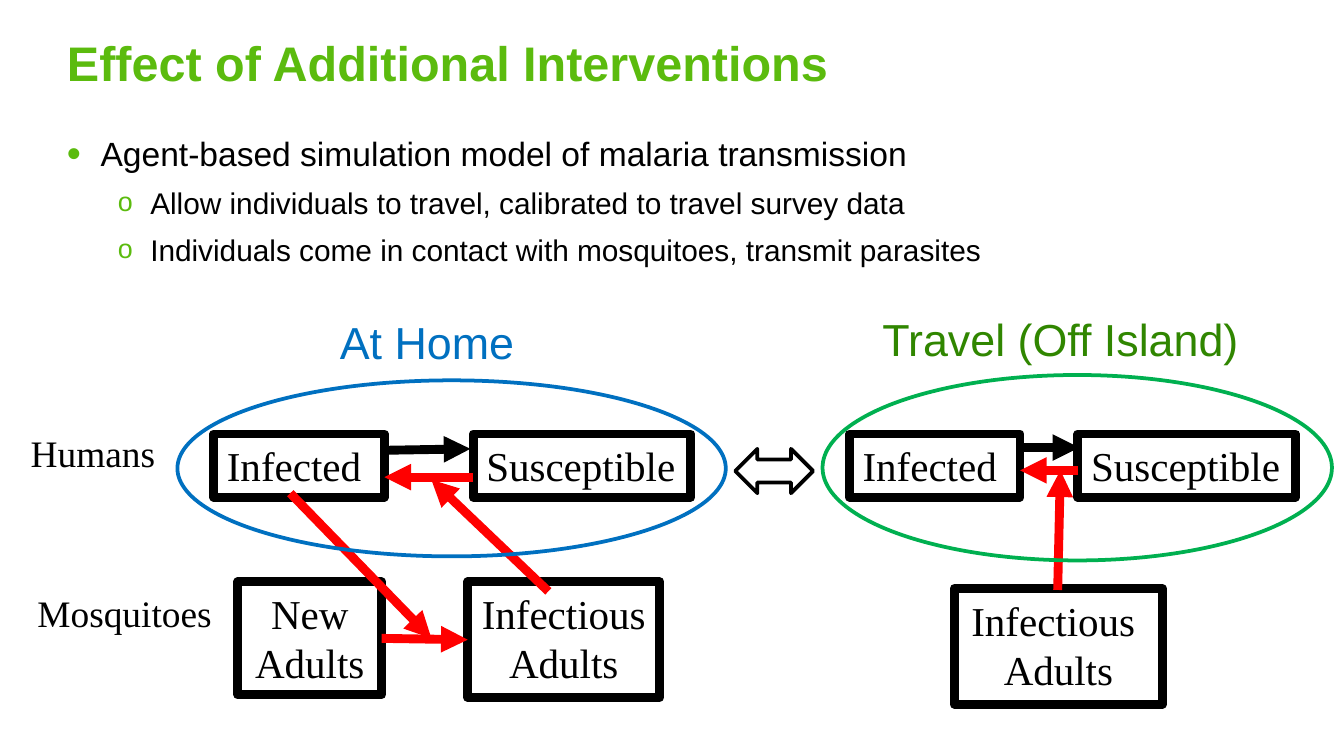
from lxml import etree
from pptx import Presentation
from pptx.dml.color import RGBColor
from pptx.enum.shapes import MSO_CONNECTOR, MSO_SHAPE
from pptx.enum.text import MSO_ANCHOR, PP_ALIGN
from pptx.oxml.ns import qn
from pptx.util import Pt

LEFT, CENTER = PP_ALIGN.LEFT, PP_ALIGN.CENTER
TOP, MIDDLE = MSO_ANCHOR.TOP, MSO_ANCHOR.MIDDLE
RECTANGLE, OVAL = MSO_SHAPE.RECTANGLE, MSO_SHAPE.OVAL
DOUBLE_ARROW = MSO_SHAPE.LEFT_RIGHT_ARROW
STRAIGHT = MSO_CONNECTOR.STRAIGHT

PX = 9144  # 100 px to the inch
SLIDE_WIDTH = 1000
SANS, SERIF = "Arial", "Times New Roman"
COLORS = {
    "lime": "5BBB0E", "black": "000000", "white": "FFFFFF", "red": "FF0000",
    "blue": "0070C0", "green": "00B050", "dark green": "308600",
}
HEAVY, THIN = 4.75, 2

TITLE = "Effect of Additional Interventions"
# text, size, left margin px, hanging px, bullet, bullet size %
POINTS = [
    ("Agent-based simulation model of malaria transmission", 18, 25, 25, "•", 120),
    ("Allow individuals to travel, calibrated to travel survey data", 16, 62, 24, "o", 90),
    ("Individuals come in contact with mosquitoes, transmit parasites", 16, 62, 24, "o", 90),
]
# text, place, font, size, colour, alignment, wrap
LABELS = [
    ("Humans", (13, 315, 140, 44), SERIF, 20, "black", LEFT, True),
    ("Mosquitoes", (18, 434, 183, 44), SERIF, 20, "black", LEFT, True),
    ("At Home", (243, 229, 151, 50), SANS, 24, "blue", LEFT, False),
    ("Travel (Off Island)", (645, 227, 288, 50), SANS, 24, "dark green", CENTER, False),
]
# name: text, place, alignment
STATES = {
    "home new": ("New Adults", (177, 433, 107, 84), CENTER),
    "home infectious": ("Infectious\nAdults", (348, 433, 143, 86), CENTER),
    "home infected": ("Infected", (159, 323, 127, 47), LEFT),
    "home susceptible": ("Susceptible", (352, 323, 162, 47), LEFT),
    "travel infectious": ("Infectious \nAdults", (710, 438, 155, 86), CENTER),
    "travel infected": ("Infected", (632, 323, 127, 47), LEFT),
    "travel susceptible": ("Susceptible", (802, 323, 162, 47), LEFT),
}
# from x, from y, to x, to y
MATURING = (284, 475, 348, 476)
INFECTION_ARROWS = [
    (216, 367, 321, 475), (352, 355, 286, 355), (408, 440, 321, 357),
    (787, 439, 789, 350), (802, 350, 759, 350),
]
RECOVERY_ARROWS = [(289, 335, 350, 334), (759, 333, 803, 333)]
GROUPS = [((132, 283, 408, 131), "blue"), ((612, 279, 379, 138), "green")]
TRAVEL_ARROW = (547, 334, 58, 33)


def color(name):
    return RGBColor.from_string(COLORS[name])


def scaled(lengths):
    return [length * PX for length in lengths]


def write(shape, text, font, size, tint, align=LEFT, anchor=TOP, wrap=True, bold=False):
    frame = shape.text_frame
    frame.word_wrap = wrap
    frame.vertical_anchor = anchor
    frame.text = text
    for para in frame.paragraphs:
        para.alignment = align
        for span in para.runs:
            span.font.name = font
            span.font.size = Pt(size)
            span.font.bold = bold
            span.font.color.rgb = color(tint)


def add_outline(page, kind, place, line, width, fill=None):
    shape = page.shapes.add_shape(kind, *scaled(place))
    shape.shadow.inherit = False
    if fill:
        shape.fill.solid()
        shape.fill.fore_color.rgb = color(fill)
    else:
        shape.fill.background()
    shape.line.color.rgb = color(line)
    shape.line.width = Pt(width)
    return shape


def add_arrow(page, ends, tint):
    arrow = page.shapes.add_connector(STRAIGHT, *scaled(ends))
    arrow.line.color.rgb = color(tint)
    arrow.line.width = Pt(HEAVY)
    etree.SubElement(arrow.line._get_or_add_ln(), qn("a:tailEnd"), type="triangle")
    etree.SubElement(arrow._element.spPr, qn("a:effectLst"))
    return arrow


def set_bullet(para, margin, hanging, mark, percent):
    properties = para._p.get_or_add_pPr()
    properties.set("marL", str(margin * PX))
    properties.set("indent", str(-hanging * PX))
    tint = etree.SubElement(properties, qn("a:buClr"))
    etree.SubElement(tint, qn("a:srgbClr"), val=COLORS["lime"])
    etree.SubElement(properties, qn("a:buSzPct"), val=str(percent * 1000))
    etree.SubElement(properties, qn("a:buFont"), typeface=SANS)
    etree.SubElement(properties, qn("a:buChar"), char=mark)


def add_points(page):
    box = page.shapes.add_textbox(*scaled((40, 94, 900, 363)))
    write(box, "\n".join(point[0] for point in POINTS), SANS, 18, "black")
    for index, (para, point) in enumerate(zip(box.text_frame.paragraphs, POINTS)):
        para.level = min(index, 1)
        if index:
            para.space_before = Pt(6)
        set_bullet(para, *point[2:])
        para.runs[0].font.size = Pt(point[1])


def main():
    deck = Presentation()
    deck.slide_width = SLIDE_WIDTH * PX
    deck.slide_height = SLIDE_WIDTH * PX * 9 // 16
    page = deck.slides.add_slide(deck.slide_layouts[6])

    title = page.shapes.add_textbox(*scaled((40, 19, 896, 54)))
    write(title, TITLE, SANS, 26, "lime", anchor=MIDDLE, bold=True)
    add_points(page)
    for text, place, font, size, tint, align, wrap in LABELS:
        label = page.shapes.add_textbox(*scaled(place))
        write(label, text, font, size, tint, align, wrap=wrap)

    states = {}
    for name, (text, place, align) in STATES.items():
        states[name] = add_outline(page, RECTANGLE, place, "black", HEAVY)
        write(states[name], text, SERIF, 22, "black", align)

    maturing = add_arrow(page, MATURING, "red")
    maturing.begin_connect(states["home new"], 3)
    maturing.end_connect(states["home infectious"], 1)
    for ends in INFECTION_ARROWS:
        add_arrow(page, ends, "red")
    for place, tint in GROUPS:
        add_outline(page, OVAL, place, tint, THIN)
    travel = add_outline(page, DOUBLE_ARROW, TRAVEL_ARROW, "black", THIN, "white")
    travel.adjustments[0] = 0.52
    travel.adjustments[1] = 0.5
    for ends in RECOVERY_ARROWS:
        add_arrow(page, ends, "black")

    deck.save("out.pptx")


if __name__ == "__main__":
    main()
